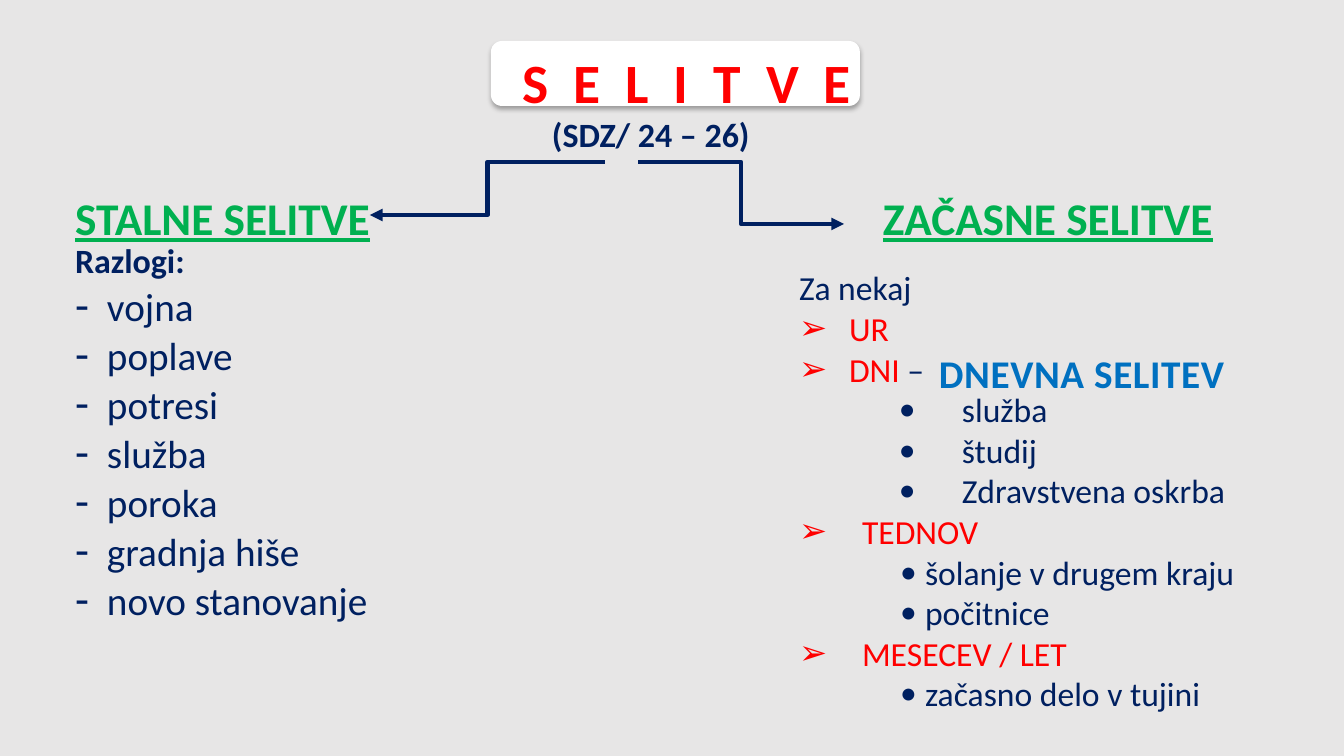
from dataclasses import dataclass
from typing import Optional

from lxml.etree import SubElement
from pptx import Presentation
from pptx.dml.color import RGBColor
from pptx.enum.shapes import MSO_CONNECTOR as CONN, MSO_SHAPE as SHAPE
from pptx.enum.text import MSO_ANCHOR as ANCHOR, MSO_AUTO_SIZE as AUTO, PP_ALIGN as ALIGN
from pptx.oxml.ns import qn
from pptx.util import Pt

SLIDE_W, SLIDE_H = 1344, 756
EMU_PER_PX = 12192000 / SLIDE_W
FONT = "Calibri"
NAVY, RED, GREEN, BLUE = "002060", "FF0000", "00B050", "0070C0"
WHITE, GREY = "FFFFFF", "E7E6E6"


@dataclass
class Bullet:
    char: str
    margin: int
    hang: int
    level: int = 0
    percent: int = 100


@dataclass
class Line:
    text: str
    size: float
    color: str = NAVY
    bold: bool = False
    underline: bool = False
    spacing: int = 0  # hundredths of a point between letters
    height: Optional[float] = None  # exact line height in points
    bullet: Optional[Bullet] = None
    tail: str = ""  # navy ending of the line


@dataclass
class Arrow:
    start: tuple[int, int]
    end: tuple[int, int]


def px(n: float) -> int:
    return round(n * EMU_PER_PX)


def rgb(color: str) -> RGBColor:
    return RGBColor.from_string(color)


def place(sp, left: int, top: int, width: int, height: int) -> None:
    box = dict(left=left, top=top, width=width, height=height)
    for name, value in box.items():
        setattr(sp, name, px(value))


def add_run(p, text: str, line: Line, color: str) -> None:
    r = p.add_run()
    r.text = text
    formats = dict(name=FONT, size=Pt(line.size), bold=line.bold, underline=line.underline)
    for name, value in formats.items():
        setattr(r.font, name, value)
    r.font.color.rgb = rgb(color)
    if line.spacing:
        r.font._element.set("spc", str(line.spacing))


def set_bullet(p, bullet: Optional[Bullet]) -> None:
    pPr = p._p.get_or_add_pPr()
    pPr.set("marL", str(px(bullet.margin if bullet else 0)))
    pPr.set("indent", str(px(-bullet.hang if bullet else 0)))
    if bullet is None:
        SubElement(pPr, qn("a:buNone"))
        return
    SubElement(pPr, qn("a:buSzPct")).set("val", str(bullet.percent * 1000))
    SubElement(pPr, qn("a:buFont")).set("typeface", FONT)
    SubElement(pPr, qn("a:buChar")).set("char", bullet.char)


def write(sp, lines: list[Line]) -> None:
    tf = sp.text_frame
    formats = dict(margin_left=0, margin_right=0, margin_top=0, margin_bottom=0,
                   word_wrap=True, auto_size=AUTO.NONE, vertical_anchor=ANCHOR.TOP)
    for name, value in formats.items():
        setattr(tf, name, value)
    for i, line in enumerate(lines):
        p = tf.add_paragraph() if i else tf.paragraphs[0]
        p.alignment = ALIGN.LEFT
        p.level = line.bullet.level if line.bullet else 0
        p.line_spacing = Pt(line.height) if line.height else 1.0
        p.space_before = p.space_after = Pt(0)
        set_bullet(p, line.bullet)
        add_run(p, line.text, line, line.color)
        if line.tail:
            add_run(p, line.tail, line, NAVY)


def add_title_card(s) -> None:
    sp = s.shapes.add_shape(SHAPE.ROUNDED_RECTANGLE, 0, 0, 0, 0)
    place(sp, 491, 41, 369, 65)
    sp.fill.solid()
    sp.fill.fore_color.rgb = rgb(WHITE)
    sp.line.fill.background()
    sp.shadow.inherit = False
    effects = sp.element.spPr.find(qn("a:effectLst"))
    shadow = SubElement(effects, qn("a:outerShdw"), blurRad=str(Pt(3.5)), dist=str(Pt(2.2)),
                        dir="5400000", algn="t", rotWithShape="0")
    tint = SubElement(shadow, qn("a:srgbClr"), val="000000")
    SubElement(tint, qn("a:alpha"), val="32000")
    s.shapes.element.insert(2, sp.element)  # behind the title


def add_arrow(s, arrow: Arrow) -> None:
    c = s.shapes.add_connector(CONN.ELBOW, *map(px, arrow.start + arrow.end))
    c.line.color.rgb = rgb(NAVY)
    c.line.width = Pt(3)
    SubElement(c.line._ln, qn("a:tailEnd"), type="triangle")
    SubElement(c._element.spPr, qn("a:effectLst"))


def heading(text: str) -> Line:
    return Line(text, 32.4, GREEN, bold=True, underline=True)


# Left list: reasons for permanent migration
DASH = Bullet("-", 32, 32, percent=116)
REASONS = ["vojna", "poplave", "potresi", "služba", "poroka", "gradnja hiše", "novo stanovanje"]
PERMANENT = [Line("Razlogi:", 24.3, bold=True, height=35)]
PERMANENT += [Line(reason, 28, height=35, bullet=DASH) for reason in REASONS]

# Right list: durations of temporary migration, with examples
NEAR, FAR = Bullet("➢", 50, 50), Bullet("➢", 63, 63)
WIDE, TIGHT = Bullet("•", 163, 63, level=1), Bullet("•", 126, 25, level=1)
DURATIONS = [
    ("UR", NEAR, "", WIDE, []),
    ("DNI", NEAR, " –", WIDE, ["služba", "študij", "Zdravstvena oskrba"]),
    ("TEDNOV", FAR, "", TIGHT, ["šolanje v drugem kraju", "počitnice"]),
    ("MESECEV / LET", FAR, "", TIGHT, ["začasno delo v tujini"]),
]
TEMPORARY = [Line("Za nekaj", 24, height=29)]
for duration, arrowhead, tail, dot, examples in DURATIONS:
    TEMPORARY.append(Line(duration, 24, RED, height=29, bullet=arrowhead, tail=tail))
    TEMPORARY += [Line(example, 24, height=29, bullet=dot) for example in examples]

# Placeholder index -> position and text
PLACEHOLDERS = {
    0: ((522, 48, 350, 68), [Line("S E L I T V E", 39.6, RED, bold=True, spacing=450)]),
    1: ((75, 190, 330, 56), [heading("STALNE SELITVE")]),
    2: ((75, 231, 420, 400), PERMANENT),
    3: ((883, 190, 380, 56), [heading("ZAČASNE SELITVE")]),
    4: ((799, 267, 510, 450), TEMPORARY),
}
LABELS = [
    ((552, 114, 240, 42), Line("(SDZ/ 24 – 26)", 24.3, bold=True)),
    ((939, 349, 340, 48), Line("DNEVNA SELITEV", 28, BLUE, bold=True, spacing=45)),
]
ARROWS = [Arrow((605, 162), (370, 215)), Arrow((638, 162), (844, 224))]


def main() -> None:
    prs = Presentation()
    prs.slide_width, prs.slide_height = px(SLIDE_W), px(SLIDE_H)
    s = prs.slides.add_slide(prs.slide_layouts.get_by_name("Comparison"))
    s.background.fill.solid()
    s.background.fill.fore_color.rgb = rgb(GREY)

    # Title, headings and lists
    add_title_card(s)
    for sp in s.placeholders:
        box, lines = PLACEHOLDERS[sp.placeholder_format.idx]
        place(sp, *box)
        write(sp, lines)

    # Free labels and branching arrows
    for box, line in LABELS:
        write(s.shapes.add_textbox(*map(px, box)), [line])
    for arrow in ARROWS:
        add_arrow(s, arrow)

    prs.save("out.pptx")


if __name__ == "__main__":
    main()
